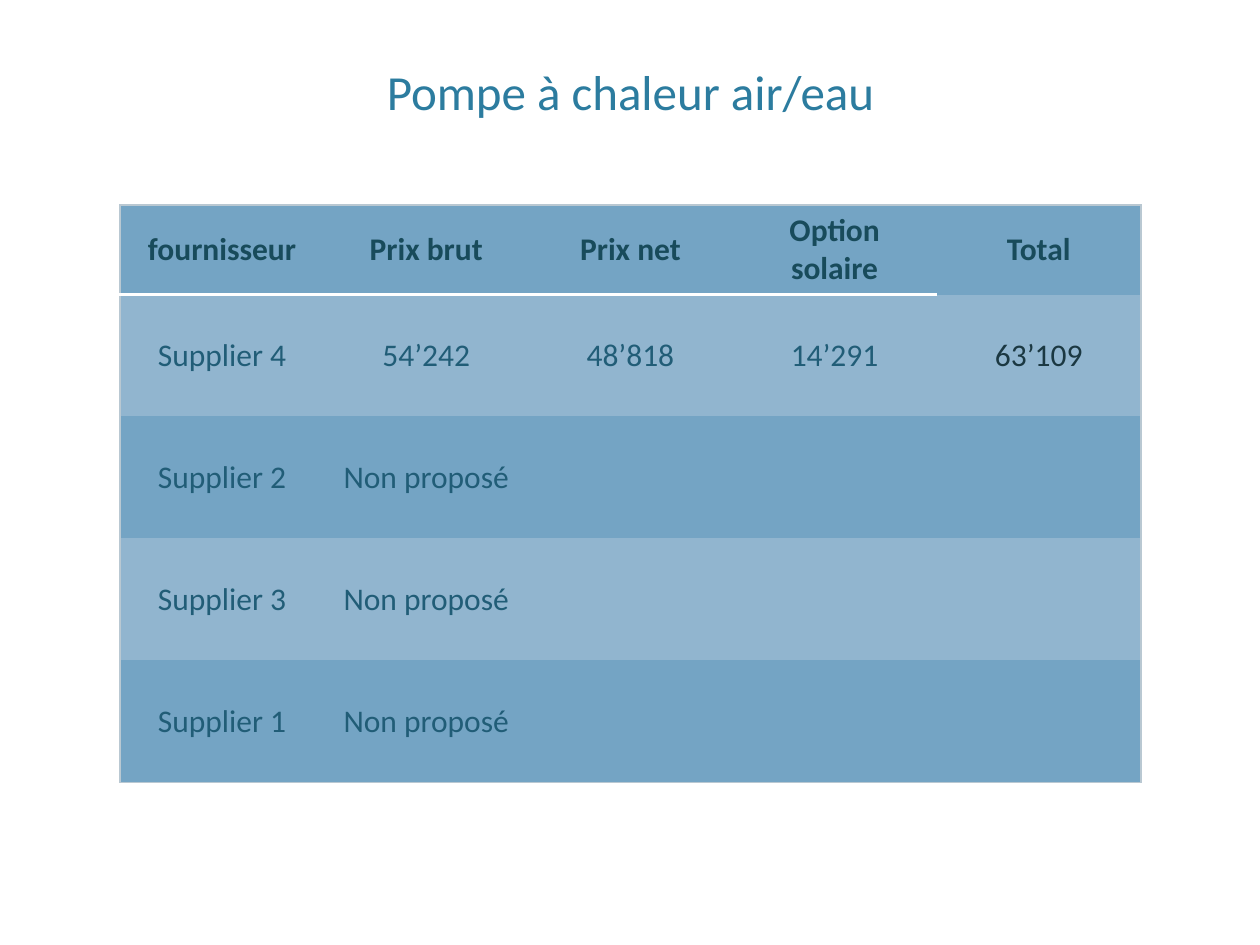
from lxml.etree import SubElement
from pptx import Presentation
from pptx.dml.color import RGBColor
from pptx.enum.text import MSO_ANCHOR as Anchor, PP_ALIGN as Align
from pptx.oxml.ns import qn
from pptx.util import Emu, Pt

PX = 914400 // 126
FONT = "Calibri"
NO_GRID_STYLE = "{2D5ABB26-0587-4C30-8999-92F81FD0307C}"
BASE, BAND = "74A4C4", "91B5CF"
HEADING, BODY, TOTAL = "184B5B", "215D77", "1B3842"
FRAME, RULE = ("B9C8D2", 1), ("FFFFFF", 2.5)
OFFERS = [
    ["fournisseur", "Prix brut", "Prix net", "Option solaire", "Total"],
    ["Supplier 4", "54’242", "48’818", "14’291", "63’109"],
    ["Supplier 2", "Non proposé", "", "", ""],
    ["Supplier 3", "Non proposé", "", "", ""],
    ["Supplier 1", "Non proposé", "", "", ""],
]


def px(length):
    return Emu(length * PX)


def color(value):
    return RGBColor.from_string(value)


def write(para, text, size, tint, bold=False):
    para.alignment = Align.CENTER
    span = para.add_run()
    span.text = text
    span.font.name = FONT
    span.font.size = Pt(size)
    span.font.bold = bold
    span.font.color.rgb = color(tint)


def add_border(cell, side, border):
    tint, width = border
    line = SubElement(cell._tc.get_or_add_tcPr(), qn(f"a:ln{side}"), w=str(Pt(width)))
    fill = SubElement(line, qn("a:solidFill"))
    SubElement(fill, qn("a:srgbClr"), val=tint)


def place_title(page, left, top, width, height):
    title = page.shapes.title
    title.left, title.top = px(left), px(top)
    title.width, title.height = px(width), px(height)
    frame = title.text_frame
    frame.word_wrap = True
    frame.vertical_anchor = Anchor.BOTTOM
    write(frame.paragraphs[0], "Pompe à chaleur air/eau", 28, "2C7C9F")


def style_cell(cell, text, row, col):
    last_row, last_col = len(OFFERS) - 1, len(OFFERS[0]) - 1
    if col == 0:
        add_border(cell, "L", FRAME)
    if col == last_col:
        add_border(cell, "R", FRAME)
    if row == 0:
        add_border(cell, "T", FRAME)
    if row == 0 and col < last_col:
        add_border(cell, "B", RULE)
    if row == last_row:
        add_border(cell, "B", FRAME)
    cell.fill.solid()
    cell.fill.fore_color.rgb = color(BAND if row % 2 else BASE)
    cell.vertical_anchor = Anchor.MIDDLE
    if text:
        tint = HEADING if row == 0 else TOTAL if col == last_col else BODY
        write(cell.text_frame.paragraphs[0], text, 18, tint, bold=row == 0)


def place_table(page, left, top, width, height, head_height, row_height):
    box = page.shapes.add_table(
        len(OFFERS), len(OFFERS[0]), px(left), px(top), px(width), px(height)
    )
    table = box.table
    table._tbl.tblPr.find(qn("a:tableStyleId")).text = NO_GRID_STYLE
    for row, texts in enumerate(OFFERS):
        table.rows[row].height = px(row_height if row else head_height)
        for col, text in enumerate(texts):
            style_cell(table.cell(row, col), text, row, col)


def main():
    deck = Presentation()
    deck.slide_width, deck.slide_height = px(1260), px(945)
    page = deck.slides.add_slide(deck.slide_layouts[5])
    place_title(page, 76, 39, 1109, 88)
    place_table(page, 120, 205, 1021, 577, 81, 122)
    deck.save("out.pptx")


if __name__ == "__main__":
    main()
